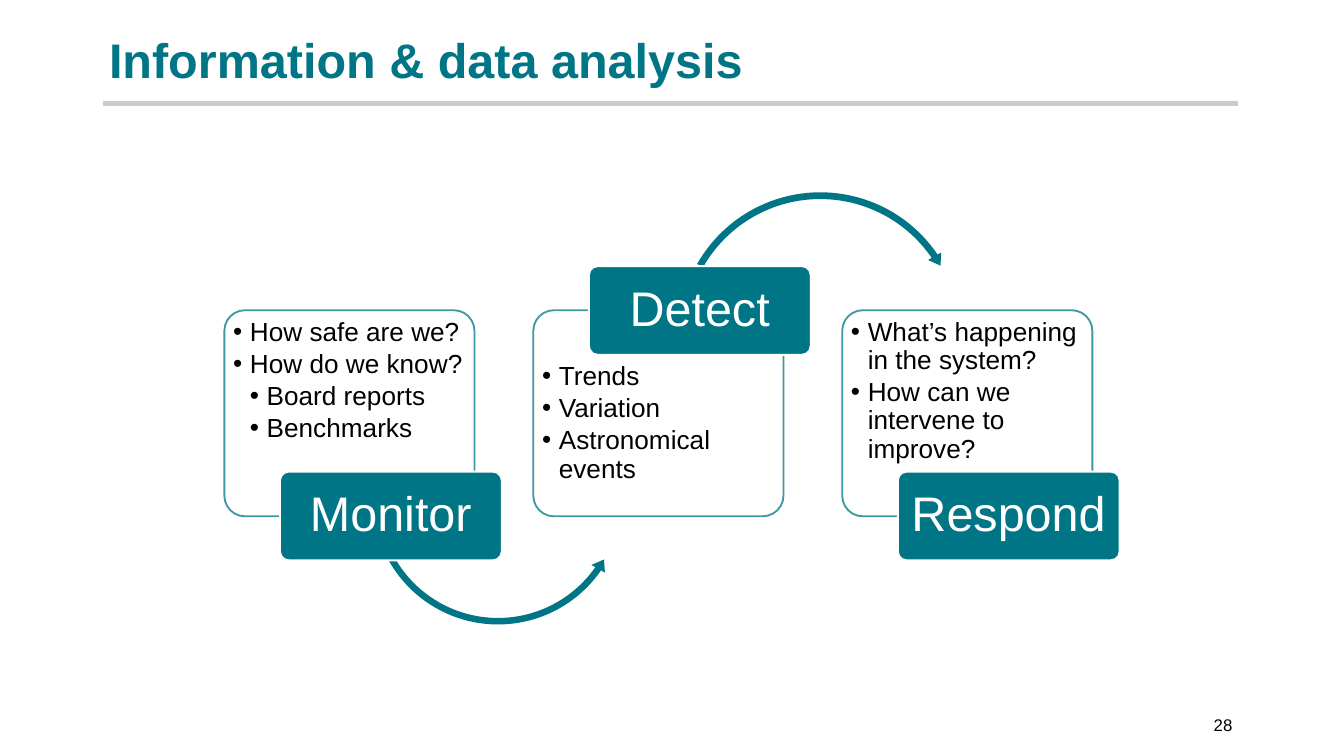
import pptx
import pptx.util
import pptx.dml.color
import pptx.enum.shapes
import pptx.enum.text
import pptx.oxml
import pptx.oxml.ns

Pt = pptx.util.Pt
Shape = pptx.enum.shapes.MSO_SHAPE
Anchor = pptx.enum.text.MSO_ANCHOR
Align = pptx.enum.text.PP_ALIGN
qn = pptx.oxml.ns.qn


def colour(value):
    return pptx.dml.color.RGBColor.from_string(value)


def add_element(parent, tag, **attributes):
    element = parent.makeelement(qn(tag), attributes)
    parent.append(element)
    return element


class SlideBuilder:
    FONT = "Arial"
    TEAL, PALE_TEAL, GREY = "007586", "4098A4", "CCCCD0"
    WHITE, BLACK = "FFFFFF", "000000"

    def __init__(self, page):
        self.page = page

    def format_frame(self, frame, anchor, side=3, edge=3):
        frame.word_wrap = True
        frame.auto_size = pptx.enum.text.MSO_AUTO_SIZE.NONE
        frame.vertical_anchor = anchor
        frame.margin_left = frame.margin_right = Pt(side)
        frame.margin_top = frame.margin_bottom = Pt(edge)

    def format_paragraph(self, para, size, ink, align=Align.LEFT, spacing=0.9, after=0, bold=False):
        para.alignment = align
        para.line_spacing = spacing
        para.space_before = Pt(0)
        para.space_after = Pt(after)
        for span in para.runs:
            span.font.name = self.FONT
            span.font.size = Pt(size)
            span.font.bold = bold
            span.font.color.rgb = colour(ink)

    def title(self, text):
        box = self.page.shapes.title
        box.left, box.top, box.width, box.height = Pt(55.4), Pt(15.1), Pt(609), Pt(64.8)
        box.text_frame.text = text
        self.format_frame(box.text_frame, Anchor.TOP)
        self.format_paragraph(box.text_frame.paragraphs[0], 26, self.TEAL,
                              spacing=0.95, after=6, bold=True)

    def rule(self, left, right, y):
        line = self.page.shapes.add_connector(
            pptx.enum.shapes.MSO_CONNECTOR.STRAIGHT, Pt(left), Pt(y), Pt(right), Pt(y))
        line.line.color.rgb = colour(self.GREY)
        line.line.width = Pt(3)
        add_element(line._element.spPr, "a:effectLst")

    def shape(self, kind, left, top, width, height, fill, outline, adjustments):
        shape = self.page.shapes.add_shape(kind, Pt(left), Pt(top), Pt(width), Pt(height))
        shape.shadow.inherit = False
        for index, value in enumerate(adjustments):
            shape.adjustments[index] = value
        shape.fill.solid()
        shape.fill.fore_color.rgb = colour(fill)
        if outline:
            shape.line.color.rgb = colour(outline)
            shape.line.width = Pt(1)
        else:
            shape.line.fill.background()
        return shape

    def card(self, left, top, width, height):
        card = self.shape(Shape.ROUNDED_RECTANGLE, left, top, width, height,
                          self.WHITE, self.PALE_TEAL, [0.1])
        fill = card._element.spPr.find(qn("a:solidFill"))
        add_element(fill[0], "a:alpha", val="90000")

    def bullets(self, left, top, width, height, items):
        box = self.page.shapes.add_textbox(Pt(left), Pt(top), Pt(width), Pt(height))
        frame = box.text_frame
        frame.text = "\n".join(text for level, text in items)
        self.format_frame(frame, Anchor.TOP, 2.1, 2.1)
        for para, (level, text) in zip(frame.paragraphs, items):
            para.level = level
            self.format_paragraph(para, 14, self.BLACK, after=2.1)
            properties = para._p.get_or_add_pPr()
            properties.set("marL", str(Pt(9 * level)))
            properties.set("indent", str(-Pt(9)))
            add_element(properties, "a:buFont", typeface=self.FONT)
            add_element(properties, "a:buChar", char="•")

    def label(self, left, top, text):
        label = self.shape(Shape.ROUNDED_RECTANGLE, left, top, 118.8, 47.5,
                           self.TEAL, self.WHITE, [0.1])
        label.text_frame.text = text
        self.format_frame(label.text_frame, Anchor.MIDDLE, 3.6, 2.6)
        self.format_paragraph(label.text_frame.paragraphs[0], 26, self.WHITE, Align.CENTER)

    def arrow(self, kind, left, top, size, adjustments):
        self.shape(kind, left, top, size, size, self.TEAL, None, adjustments)

    def page_number(self, text):
        box = self.page.shapes.add_textbox(Pt(578.2), Pt(380.9), Pt(85), Pt(14.4))
        box.text_frame.text = text
        self.format_frame(box.text_frame, Anchor.MIDDLE)
        self.format_paragraph(box.text_frame.paragraphs[0], 9, self.BLACK,
                              Align.RIGHT, spacing=1.0, after=2)


# Each step: label, label top, list top, bullets (level, text), arrow to the next step
STEPS = [
    ("Monitor", 252.7, 168.6,
     [(1, "How safe are we?"), (1, "How do we know?"),
      (2, "Board reports"), (2, "Benchmarks")],
     (Shape.LEFT_CIRCULAR_ARROW, 197.3, 198, 139, [0.025, 3.094, 20.849, 90.245, 0.03])),
    ("Detect", 142.6, 192.4,
     [(1, "Trends"), (1, "Variation"), (1, "Astronomical events")],
     (Shape.CIRCULAR_ARROW, 361.4, 100.8, 156.2, [0.023, 2.738, 195.507, 125.755, 0.026])),
    ("Respond", 252.7, 168.6,
     [(1, "What’s happening in the system?"), (1, "How can we intervene to improve?")],
     None),
]
FIRST_LEFT, STEP_WIDTH = 120.2, 165.5


def main():
    deck = pptx.Presentation()
    deck.slide_width, deck.slide_height = Pt(720), Pt(405)
    builder = SlideBuilder(deck.slides.add_slide(deck.slide_layouts[5]))

    # Heading
    builder.rule(55.4, 663.4, 55.4)
    builder.title("Information & data analysis")

    # Process steps
    for index, (name, label_top, list_top, items, arrow) in enumerate(STEPS):
        left = FIRST_LEFT + index * STEP_WIDTH
        builder.card(left, 166.2, 134, 110.4)
        builder.bullets(left + 2.6, list_top, 128.8, 81.4, items)
        if arrow:
            builder.arrow(*arrow)
        builder.label(left + 29.8, label_top, name)

    # Footer
    builder.page_number("28")
    deck.save("out.pptx")


if __name__ == "__main__":
    main()
